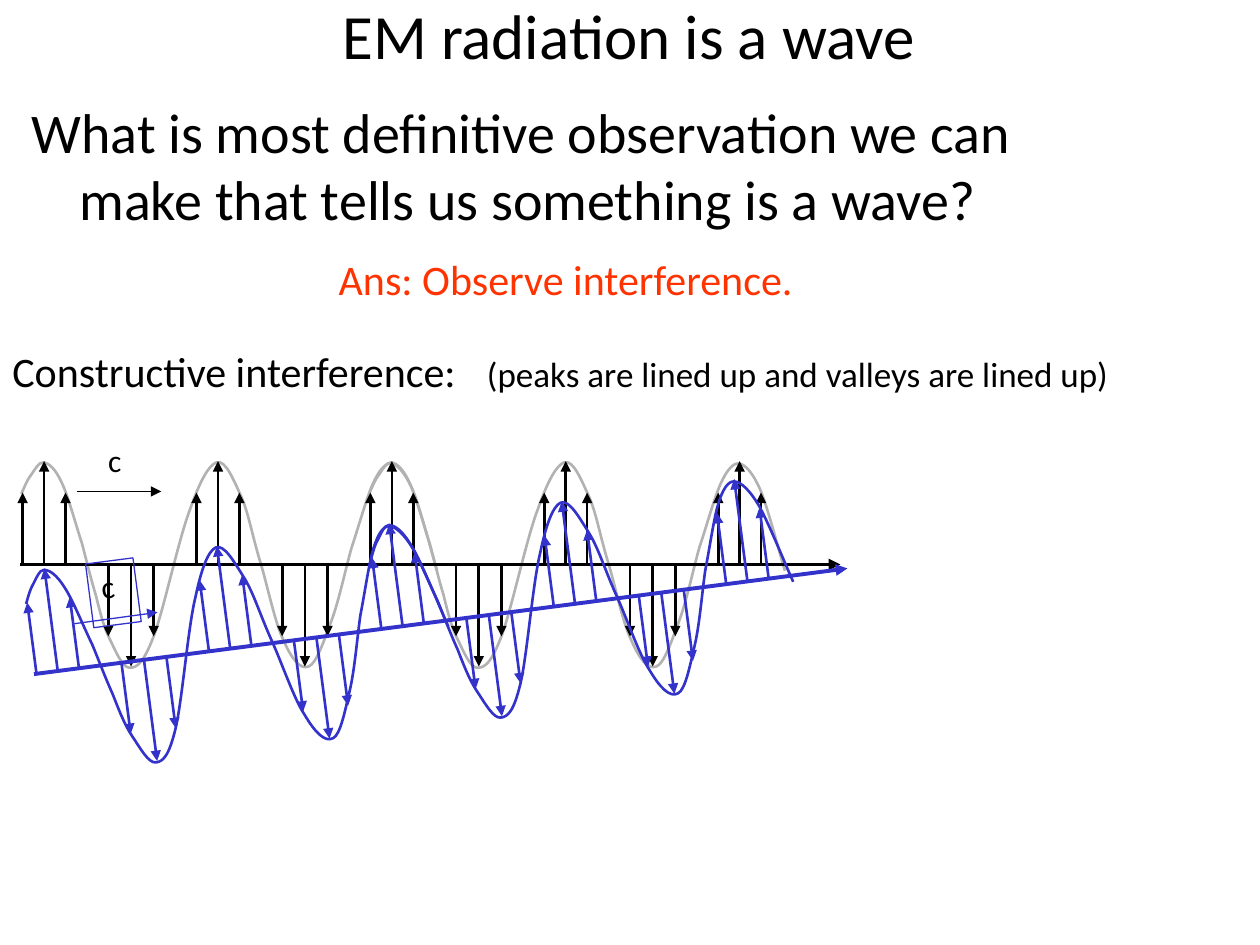
from dataclasses import dataclass
from math import cos, radians, sin

from lxml.etree import SubElement
from pptx import Presentation
from pptx.dml.color import RGBColor
from pptx.enum.shapes import MSO_CONNECTOR as Connector, MSO_SHAPE as Preset
from pptx.enum.text import MSO_ANCHOR as Anchor, MSO_AUTO_SIZE as AutoSize, PP_ALIGN as Align
from pptx.oxml.ns import qn
from pptx.util import Inches, Pt


@dataclass(frozen=True)
class Theme:
    """Colours, type sizes and line widths of the slide."""
    font: str = "Calibri"
    ink: str = "000000"
    answer: str = "FF3300"
    envelope: str = "B2B2B2"
    tilted: str = "3333CC"
    title: int = 36
    question: int = 32
    heading: int = 24
    aside: int = 20
    small: int = 18
    axis: float = 2.25
    field: float = 1.5
    thin: float = 0.75


THEME = Theme()
AXIS_START = (0.16, 4.48)
TILTED_START = (0.27, 5.35)
TILT = -7.4
AXIS_LENGTH = 6.51
WAVELENGTH = 1.38
FIELD_SETS = [
    (0.19, 5, 0.17, -0.57, -0.82),
    (0.88, 4, 0.18, 0.57, 0.81),
]
WAVE_START = (0.01, -0.56)
WAVE_CURVES = [
    ((0.02, -0.58), (0.05, -0.66), (0.08, -0.70)),
    ((0.11, -0.74), (0.15, -0.82), (0.19, -0.81)),
    ((0.23, -0.80), (0.28, -0.76), (0.33, -0.65)),
    ((0.38, -0.55), (0.44, -0.32), (0.49, -0.17)),
    ((0.53, -0.02), (0.56, 0.11), (0.60, 0.24)),
    ((0.63, 0.36), (0.66, 0.49), (0.71, 0.59)),
    ((0.76, 0.69), (0.81, 0.82), (0.87, 0.82)),
    ((0.93, 0.82), (0.98, 0.78), (1.06, 0.57)),
    ((1.14, 0.36), (1.26, -0.21), (1.35, -0.44)),
    ((1.43, -0.67), (1.50, -0.79), (1.56, -0.81)),
    ((1.63, -0.83), (1.69, -0.68), (1.75, -0.55)),
    ((1.81, -0.42), (1.84, -0.24), (1.90, -0.04)),
    ((1.96, 0.15), (2.02, 0.46), (2.09, 0.60)),
    ((2.15, 0.74), (2.22, 0.84), (2.29, 0.81)),
    ((2.35, 0.79), (2.41, 0.61), (2.47, 0.45)),
    ((2.53, 0.29), (2.58, 0.05), (2.63, -0.13)),
    ((2.69, -0.31), (2.75, -0.53), (2.80, -0.64)),
    ((2.85, -0.75), (2.90, -0.81), (2.95, -0.80)),
    ((3.00, -0.79), (3.06, -0.72), (3.12, -0.58)),
    ((3.18, -0.43), (3.27, -0.08), (3.31, 0.05)),
]


def write(frame, *runs, color=THEME.ink, align=Align.LEFT, anchor=Anchor.TOP,
          wrap=True, auto_size=AutoSize.SHAPE_TO_FIT_TEXT):
    """Fill a text frame with one paragraph of (text, size) runs."""
    frame.word_wrap = wrap
    frame.auto_size = auto_size
    frame.vertical_anchor = anchor
    paragraph = frame.paragraphs[0]
    paragraph.alignment = align
    for words, size in runs:
        run = paragraph.add_run()
        run.text = words
        run.font.name = THEME.font
        run.font.size = Pt(size)
        run.font.color.rgb = RGBColor.from_string(color)
    return paragraph


def move(shape, left, top, width, height):
    """Set the box of a shape in inches."""
    shape.left, shape.top = Inches(left), Inches(top)
    shape.width, shape.height = Inches(width), Inches(height)


def label(shapes, box, *runs, **text_format):
    """Add a text box at a box in inches."""
    write(shapes.add_textbox(*map(Inches, box)).text_frame, *runs, **text_format)


def stroke(shape, color, width):
    """Give a shape or connector its line."""
    shape.line.color.rgb = RGBColor.from_string(color)
    shape.line.width = Pt(width)


def arrow(shapes, start, end, color, width):
    """Add a straight arrow with a triangle at its end."""
    line = shapes.add_connector(Connector.STRAIGHT, *map(Inches, (*start, *end)))
    stroke(line, color, width)
    SubElement(line.line._get_or_add_ln(), qn("a:tailEnd"), type="triangle")
    SubElement(line._element.spPr, qn("a:effectLst"))


def smooth(freeform):
    """Turn each three straight segments of a freeform into one cubic curve."""
    outline = freeform._element.find(".//" + qn("a:path"))
    segments = outline.findall(qn("a:lnTo"))
    for first in range(0, len(segments), 3):
        curve = SubElement(outline, qn("a:cubicBezTo"))
        for segment in segments[first:first + 3]:
            curve.append(segment[0])
            outline.remove(segment)


def envelope(shapes, place, shift, angle, color):
    """Draw a two-cycle wave, turned about its centre."""
    controls = [(Inches(x), Inches(y)) for curve in WAVE_CURVES for x, y in curve]
    builder = shapes.build_freeform(*map(Inches, WAVE_START))
    builder.add_line_segments(controls, close=False)
    wave = builder.convert_to_shape()
    smooth(wave)
    center = place((wave.left + wave.width / 2) / Inches(1) + shift,
                   (wave.top + wave.height / 2) / Inches(1))
    wave.left = Inches(center[0]) - wave.width // 2
    wave.top = Inches(center[1]) - wave.height // 2
    wave.rotation = angle
    wave.shadow.inherit = False
    wave.fill.background()
    stroke(wave, color, THEME.field)


def wave_train(shapes, origin, angle, wave_color, field_color):
    """Draw waves, field arrows and axis from an origin at an angle."""
    turn_cos, turn_sin = cos(radians(angle)), sin(radians(angle))

    def place(x, y):
        """Turn a point of the train into a slide position."""
        return (origin[0] + x * turn_cos - y * turn_sin,
                origin[1] + x * turn_sin + y * turn_cos)

    for shift in (0, 2 * WAVELENGTH):
        envelope(shapes, place, shift, angle, wave_color)
    for first, count, gap, side, middle in FIELD_SETS:
        for cycle in range(count):
            for offset, height in ((-gap, side), (0, middle), (gap, side)):
                x = first + cycle * WAVELENGTH + offset
                arrow(shapes, place(x, 0), place(x, height), field_color, THEME.field)
    arrow(shapes, place(0, 0), place(AXIS_LENGTH, 0), field_color, THEME.axis)


def tilted_speed(shapes):
    """Add the speed arrow and boxed letter of the tilted wave."""
    arrow(shapes, (0.59, 4.95), (1.25, 4.86), THEME.tilted, THEME.thin)
    box = shapes.add_shape(Preset.RECTANGLE, *map(Inches, (0.71, 4.45, 0.38, 0.51)))
    box.rotation = TILT
    box.shadow.inherit = False
    box.fill.background()
    stroke(box, THEME.tilted, THEME.thin)
    write(box.text_frame, ("c", THEME.small), wrap=False)


def main():
    """Build the slide and save it."""
    deck = Presentation()
    deck.slide_width, deck.slide_height = Inches(10), Inches(7.5)
    slide = deck.slides.add_slide(deck.slide_layouts[1])
    shapes = slide.shapes

    title, question = slide.placeholders
    move(title, 0.49, 0, 9, 0.54)
    write(title.text_frame, ("EM radiation is a wave", THEME.title),
          align=Align.CENTER, anchor=Anchor.MIDDLE, auto_size=AutoSize.NONE)
    move(question, 0.15, 0.72, 9, 4.95)
    paragraph = write(
        question.text_frame,
        ("What is most definitive observation we can make that tells us something is a wave?",
         THEME.question), auto_size=AutoSize.NONE)
    properties = paragraph._p.get_or_add_pPr()
    properties.set("marL", str(Inches(0.38)))
    properties.set("indent", str(Inches(-0.38)))
    SubElement(properties, qn("a:buNone"))

    label(shapes, (2.59, 1.96, 3.84, 0.5), ("Ans: Observe interference.", THEME.heading),
          (" ", THEME.small), color=THEME.answer, wrap=False)
    label(shapes, (0, 2.69, 3.76, 0.5), ("Constructive interference:", THEME.heading),
          (" ", THEME.small), wrap=False)

    wave_train(shapes.add_group_shape().shapes, AXIS_START, 0, THEME.envelope, THEME.ink)
    arrow(shapes, (0.61, 3.9), (1.28, 3.9), THEME.ink, THEME.thin)
    label(shapes, (0.76, 3.45, 0.37, 0.5), ("c", THEME.small), wrap=False)

    tilted = shapes.add_group_shape().shapes
    wave_train(tilted, TILTED_START, TILT, THEME.tilted, THEME.tilted)
    tilted_speed(tilted)
    label(shapes, (3.71, 2.75, 5.79, 0.44), (" ", THEME.small),
          ("(peaks are lined up and valleys are lined up)", THEME.aside))
    deck.save("out.pptx")


if __name__ == "__main__":
    main()
